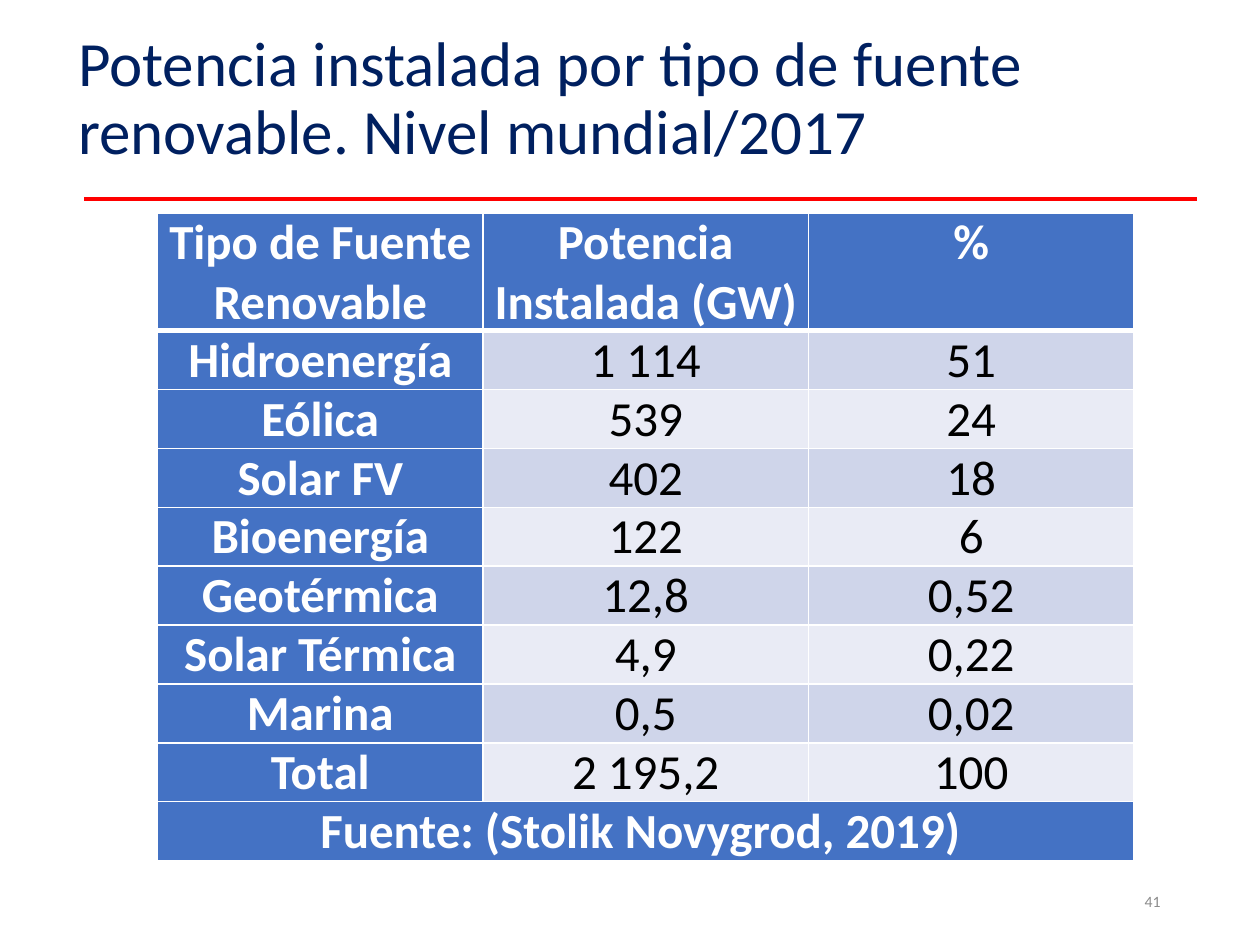
from dataclasses import dataclass

from lxml import etree
from pptx import Presentation
from pptx.dml.color import RGBColor
from pptx.enum.shapes import MSO_CONNECTOR
from pptx.enum.text import MSO_ANCHOR, PP_ALIGN
from pptx.oxml.ns import qn
from pptx.util import Inches, Pt

LEFT, CENTER, RIGHT = PP_ALIGN.LEFT, PP_ALIGN.CENTER, PP_ALIGN.RIGHT
TOP, MIDDLE = MSO_ANCHOR.TOP, MSO_ANCHOR.MIDDLE
STRAIGHT = MSO_CONNECTOR.STRAIGHT
TITLE_ONLY = 5


@dataclass(frozen=True)
class Theme:
    font: str = "Calibri"
    title: str = "002060"
    accent: str = "4472C4"
    bands: tuple = ("CFD5EA", "E9EBF5")
    rule: str = "FF0000"
    light: str = "FFFFFF"
    dark: str = "000000"
    muted: str = "8C8C8C"
    title_size: float = 36
    table_size: float = 28
    number_size: float = 9


class SlideBuilder:
    """Places styled elements on a grid of 100 columns by 75 rows."""

    COLS, ROWS = 100, 75

    def __init__(self, prs, theme):
        self.theme = theme
        self.col = prs.slide_width / self.COLS
        self.row = prs.slide_height / self.ROWS
        self.s = prs.slides.add_slide(prs.slide_layouts[TITLE_ONLY])

    def box(self, x, y, w, h):
        return (round(x * self.col), round(y * self.row),
                round(w * self.col), round(h * self.row))

    def add_text(self, tf, text, size, color, align=LEFT, bold=False):
        p = tf.paragraphs[0]
        p.alignment = align
        r = p.add_run()
        r.text = text
        r.font.name = self.theme.font
        r.font.size = Pt(size)
        r.font.bold = bold
        r.font.color.rgb = RGBColor.from_string(color)
        return p

    def title(self, text, *place):
        sp = self.s.shapes.title
        sp.left, sp.top, sp.width, sp.height = self.box(*place)
        tf = sp.text_frame
        tf.word_wrap = True
        tf.vertical_anchor = MIDDLE
        p = self.add_text(tf, text, self.theme.title_size, self.theme.title)
        p.line_spacing = 0.9

    def slide_number(self, text, *place):
        tf = self.s.shapes.add_textbox(*self.box(*place)).text_frame
        tf.word_wrap = True
        tf.vertical_anchor = MIDDLE
        self.add_text(tf, text, self.theme.number_size, self.theme.muted, RIGHT)

    def rule(self, x1, x2, y, weight):
        x, y, w, _ = self.box(x1, y, x2 - x1, 0)
        line = self.s.shapes.add_connector(STRAIGHT, x, y, x + w, y)
        line.line.color.rgb = RGBColor.from_string(self.theme.rule)
        line.line.width = Pt(weight)
        etree.SubElement(line._element.spPr, qn("a:effectLst"))

    def borders(self, cell, bottom):
        tcPr = cell._tc.get_or_add_tcPr()
        for i, (side, weight) in enumerate(
                (("L", 1), ("R", 1), ("T", 1), ("B", bottom))):
            ln = etree.Element(qn(f"a:ln{side}"), w=str(Pt(weight)))
            fill = etree.SubElement(ln, qn("a:solidFill"))
            etree.SubElement(fill, qn("a:srgbClr"), val=self.theme.light)
            tcPr.insert(i, ln)

    def cell(self, cell, text, fill, color, bold, bottom=1):
        cell.margin_left = cell.margin_right = Inches(0.07)
        cell.margin_top = cell.margin_bottom = 0
        cell.vertical_anchor = TOP
        cell.fill.solid()
        cell.fill.fore_color.rgb = RGBColor.from_string(fill)
        self.borders(cell, bottom)
        if text:
            self.add_text(cell.text_frame, text, self.theme.table_size,
                          color, CENTER, bold)

    def table(self, header, rows, source, *place):
        """Add a table with a two-line header and a merged source row."""
        th = self.theme
        x, y, w, h = self.box(*place)
        n_rows, n_cols = len(rows) + 2, len(header)
        table = self.s.shapes.add_table(n_rows, n_cols, x, y, w, h).table
        line = h // (n_rows + 1)
        for i, row in enumerate(table.rows):
            row.height = line * (2 if i == 0 else 1)
        last = n_rows - 1
        footer = (source,) + ("",) * (n_cols - 1)
        for i, values in enumerate((header, *rows, footer)):
            for j, text in enumerate(values):
                strong = i in (0, last) or j == 0
                fill = th.accent if strong else th.bands[(i - 1) % 2]
                color = th.light if strong else th.dark
                self.cell(table.cell(i, j), text, fill, color, strong,
                          bottom=3 if i == 0 else 1)
        table.cell(last, 0).merge(table.cell(last, n_cols - 1))


HEADER = ("Tipo de Fuente Renovable", "Potencia Instalada (GW)", "%")
SOURCES = (
    ("Hidroenergía", "1 114", "51"),
    ("Eólica", "539", "24"),
    ("Solar FV", "402", "18"),
    ("Bioenergía", "122", "6"),
    ("Geotérmica", "12,8", "0,52"),
    ("Solar Térmica", "4,9", "0,22"),
    ("Marina", "0,5", "0,02"),
    ("Total", "2 195,2", "100"),
)


def main():
    prs = Presentation()
    prs.slide_width, prs.slide_height = Inches(10), Inches(7.5)
    slide = SlideBuilder(prs, Theme())
    slide.title("Potencia instalada por tipo de fuente renovable. "
                "Nivel mundial/2017", 5.2, 1.7, 90, 12.5)
    slide.slide_number("41", 70.6, 69.5, 22.5, 4)
    slide.table(HEADER, SOURCES, "Fuente: (Stolik Novygrod, 2019) ",
                12.5, 16.9, 77.5, 51.3)
    slide.rule(6.7, 95, 15.8, 2)
    prs.save("out.pptx")


if __name__ == "__main__":
    main()
